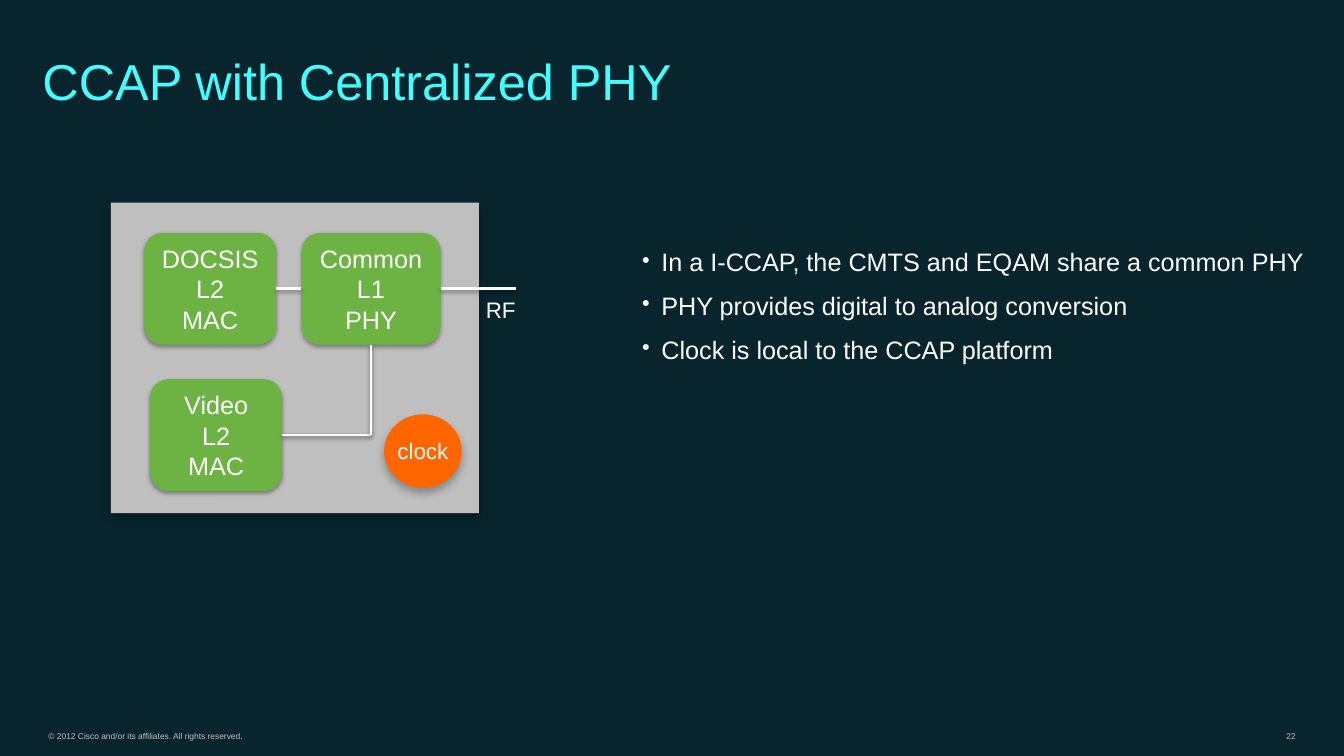
from dataclasses import dataclass

from lxml import etree
from pptx import Presentation, util as u
from pptx.dml.color import RGBColor
from pptx.enum import shapes, text
from pptx.oxml.ns import qn


@dataclass(frozen=True)
class Theme:
    font: str = "Arial"
    background: str = "08252E"
    title: str = "40FFFE"
    body: str = "FFFFFF"
    footer: str = "C0C0C0"
    panel: str = "BFBFBF"
    block: str = "6DB344"
    clock: str = "FF6600"
    title_size: float = 36
    body_size: float = 18
    label_size: float = 16
    footer_size: float = 6
    line_width: float = 2
    # Shadows: opacity in percent, blur and distance in points
    deep_shadow: tuple = (27, 6, 4)
    block_shadow: tuple = (35, 3.1, 1.8)
    line_shadow: tuple = (38, 3.1, 1.6)


THEME = Theme()


@dataclass(frozen=True)
class Box:
    left: float
    top: float
    width: float
    height: float

    def at(self, x, y):
        """Point at x and y percent of this box."""
        return round(self.left + self.width * x / 100), round(self.top + self.height * y / 100)

    def area(self, x, y, width, height):
        """Box whose place and size are percentages of this one."""
        return Box(*self.at(x, y), round(self.width * width / 100), round(self.height * height / 100))

    def frame(self):
        return self.left, self.top, self.width, self.height


def add_shadow(shape, opacity, blur, distance):
    properties = shape._element.spPr
    for old in properties.findall(qn("a:effectLst")):
        properties.remove(old)
    effects = etree.SubElement(properties, qn("a:effectLst"))
    shadow = etree.SubElement(effects, qn("a:outerShdw"), blurRad=str(u.Pt(blur)),
                              dist=str(u.Pt(distance)), dir="5400000", rotWithShape="0")
    color = etree.SubElement(shadow, qn("a:srgbClr"), val="000000")
    etree.SubElement(color, qn("a:alpha"), val=str(opacity * 1000))


def add_bullet(paragraph):
    properties = paragraph._p.get_or_add_pPr()
    properties.set("marL", str(u.Inches(0.19)))
    properties.set("indent", str(-u.Inches(0.19)))
    etree.SubElement(properties, qn("a:buSzPct"), val="90000")
    etree.SubElement(properties, qn("a:buChar"), char="•")


def write(shape, lines, size, color, anchor=text.MSO_ANCHOR.TOP, align=text.PP_ALIGN.LEFT,
          wrap=True, margins=(0.1, 0.05), spacing=None, before=0, bullets=False):
    frame = shape.text_frame
    frame.word_wrap = wrap
    frame.vertical_anchor = anchor
    frame.margin_left = frame.margin_right = u.Inches(margins[0])
    frame.margin_top = frame.margin_bottom = u.Inches(margins[1])
    frame.text = "\n".join(lines)
    for index, paragraph in enumerate(frame.paragraphs):
        if bullets:
            add_bullet(paragraph)
        paragraph.alignment = align
        paragraph.line_spacing = spacing
        if index and before:
            paragraph.space_before = u.Pt(before)
        paragraph.font.name = THEME.font
        paragraph.font.size = u.Pt(size)
        paragraph.font.color.rgb = RGBColor.from_string(color)


def add_text(slide, box, lines, size, color, **options):
    write(slide.shapes.add_textbox(*box.frame()), lines, size, color, **options)


def add_solid(slide, box, kind, fill, shadow):
    shape = slide.shapes.add_shape(kind, *box.frame())
    shape.shadow.inherit = False
    shape.fill.solid()
    shape.fill.fore_color.rgb = RGBColor.from_string(fill)
    shape.line.fill.background()
    add_shadow(shape, *shadow)
    return shape


def add_block(slide, box, lines):
    block = add_solid(slide, box, shapes.MSO_SHAPE.ROUNDED_RECTANGLE, THEME.block, THEME.block_shadow)
    write(block, lines, THEME.body_size, THEME.body,
          anchor=text.MSO_ANCHOR.MIDDLE, align=text.PP_ALIGN.CENTER)
    return block


def add_link(slide, start, end):
    link = slide.shapes.add_connector(shapes.MSO_CONNECTOR.STRAIGHT, *start, *end)
    link.line.color.rgb = RGBColor.from_string(THEME.body)
    link.line.width = u.Pt(THEME.line_width)
    add_shadow(link, *THEME.line_shadow)
    return link


def draw_platform(slide, box):
    """The platform panel with its blocks, clock and RF output."""
    add_solid(slide, box, shapes.MSO_SHAPE.RECTANGLE, THEME.panel, THEME.deep_shadow)

    docsis_box = box.area(9.04, 9.74, 35.89, 36.04)
    phy_box = box.area(51.78, 9.74, 37.81, 36.04)
    video_box = box.area(10.68, 56.82, 35.89, 36.04)
    docsis = add_block(slide, docsis_box, ["DOCSIS", "L2", "MAC"])
    phy = add_block(slide, phy_box, ["Common", "L1", "PHY"])
    video = add_block(slide, video_box, ["Video", "L2", "MAC"])

    docsis_link = add_link(slide, docsis_box.at(100, 50), phy_box.at(0, 50))
    docsis_link.begin_connect(docsis, 3)
    docsis_link.end_connect(phy, 1)
    corner = phy_box.at(50, 0)[0], video_box.at(0, 50)[1]
    add_link(slide, video_box.at(100, 50), corner).begin_connect(video, 3)
    add_link(slide, corner, phy_box.at(50, 100)).end_connect(phy, 2)
    output_end = box.at(110.14, 0)[0], phy_box.at(0, 50)[1]
    add_link(slide, phy_box.at(100, 50), output_end).begin_connect(phy, 3)

    clock = add_solid(slide, box.area(74.25, 68.18, 21.1, 23.7),
                      shapes.MSO_SHAPE.OVAL, THEME.clock, THEME.deep_shadow)
    write(clock, ["clock"], THEME.label_size, THEME.body, anchor=text.MSO_ANCHOR.MIDDLE,
          align=text.PP_ALIGN.CENTER, wrap=False, margins=(0, 0))
    add_text(slide, box.area(99.18, 28.57, 13.7, 12.01), ["RF"],
             THEME.label_size, THEME.body, wrap=False)


def draw_title(slide, box):
    add_text(slide, box, ["CCAP with Centralized PHY"], THEME.title_size, THEME.title,
             anchor=text.MSO_ANCHOR.BOTTOM, margins=(0.09, 0.05), spacing=0.8)


def draw_points(slide, box):
    points = [
        "In a I-CCAP, the CMTS and EQAM share a common PHY",
        "PHY provides digital to analog conversion",
        "Clock is local to the CCAP platform",
    ]
    add_text(slide, box, points, THEME.body_size, THEME.body, margins=(0.13, 0.07),
             spacing=0.95, before=10.8, bullets=True)


def draw_footer(slide, box):
    style = dict(anchor=text.MSO_ANCHOR.BOTTOM, margins=(0.09, 0.04))
    add_text(slide, box.area(0, 0, 39.76, 100),
             ["© 2012 Cisco and/or its affiliates. All rights reserved."],
             THEME.footer_size, THEME.footer, **style)
    add_text(slide, box.area(97.77, 0, 2.23, 100), ["22"], THEME.footer_size, THEME.footer,
             align=text.PP_ALIGN.RIGHT, wrap=False, **style)


def main():
    presentation = Presentation()
    presentation.slide_width = u.Inches(13.33)
    presentation.slide_height = u.Inches(7.5)
    slide = presentation.slides.add_slide(presentation.slide_layouts[6])
    slide.background.fill.solid()
    slide.background.fill.fore_color.rgb = RGBColor.from_string(THEME.background)

    page = Box(0, 0, presentation.slide_width, presentation.slide_height)
    draw_title(slide, page.area(2.48, 2.93, 93.85, 12.27))
    draw_platform(slide, page.area(8.25, 26.8, 27.38, 41.07))
    draw_points(slide, page.area(46.81, 32, 53.19, 22.4))
    draw_footer(slide, page.area(2.93, 96, 94.15, 2.53))
    presentation.save("out.pptx")


if __name__ == "__main__":
    main()
